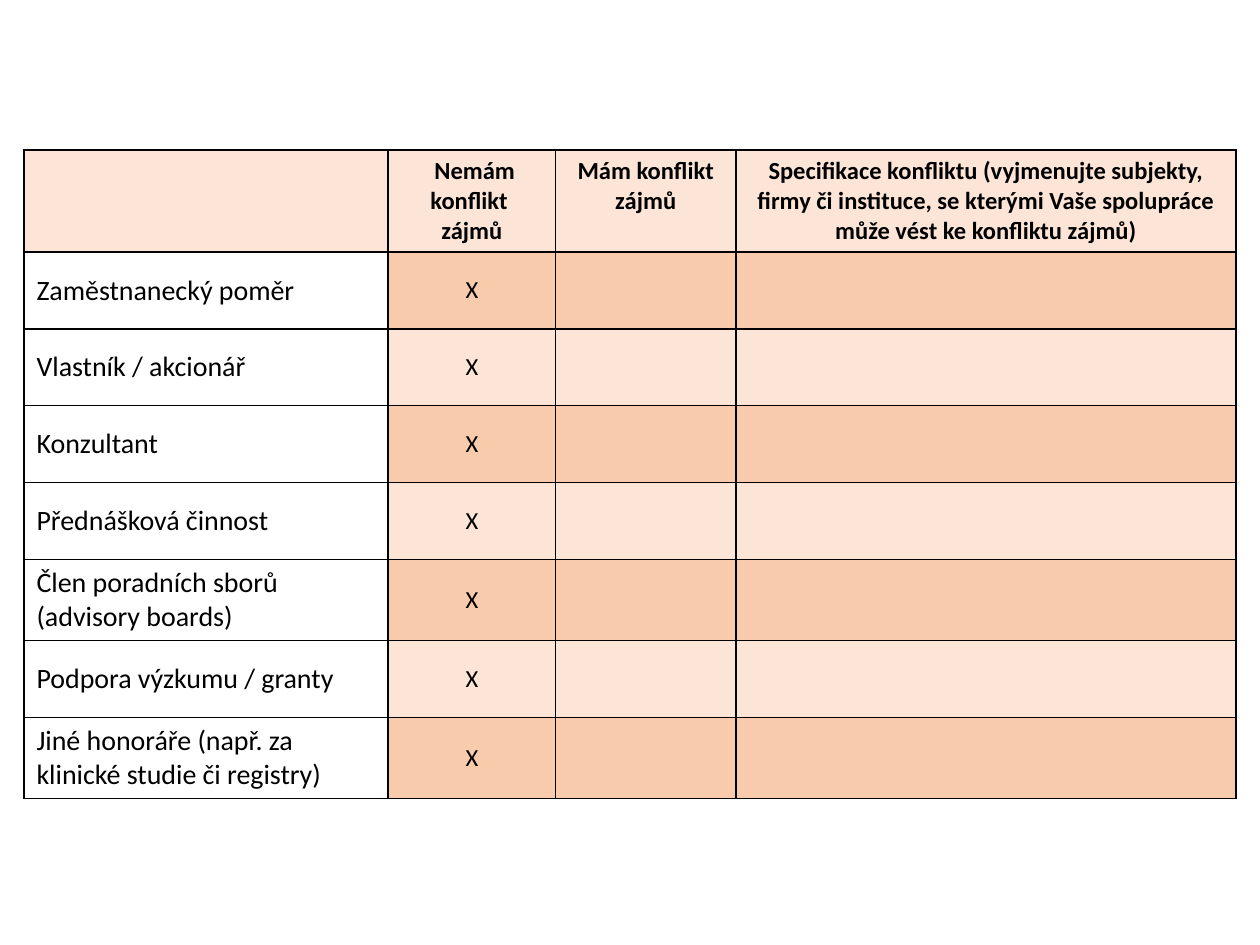
"""Build a slide with a conflict of interest declaration table."""
from dataclasses import dataclass

from lxml.etree import SubElement
from pptx import Presentation
from pptx.dml.color import RGBColor
from pptx.enum.text import MSO_ANCHOR as Anchor, PP_ALIGN as Align
from pptx.oxml.ns import qn
from pptx.table import _Cell as Cell
from pptx.util import Inches, Pt

BLACK, WHITE, LIGHT, DARK = "000000", "FFFFFF", "FCE4D6", "F8CBAD"
COLUMN_WIDTHS = (2.89, 1.33, 1.43, 3.97)
ROW_HEIGHT = 0.61
HEADERS = (
    "",
    " Nemám konflikt \nzájmů",
    "Mám konflikt zájmů",
    "Specifikace konfliktu (vyjmenujte subjekty, firmy či instituce, "
    "se kterými Vaše spolupráce může vést ke konfliktu zájmů)",
)
RELATIONS = (
    "Zaměstnanecký poměr",
    "Vlastník / akcionář",
    "Konzultant",
    "Přednášková činnost",
    "Člen poradních sborů (advisory boards)",
    "Podpora výzkumu / granty",
    "Jiné honoráře (např. za klinické studie či registry)",
)


@dataclass(frozen=True)
class CellStyle:
    fill: str
    size: int = 14
    bold: bool = False
    align: Align = Align.CENTER
    anchor: Anchor = Anchor.MIDDLE


HEADER = CellStyle(LIGHT, bold=True, anchor=Anchor.TOP)
LABEL = CellStyle(WHITE, size=16, align=Align.LEFT)
BANDS = (CellStyle(DARK), CellStyle(LIGHT))


def color(value: str) -> RGBColor:
    return RGBColor.from_string(value)


def add_borders(cell: Cell) -> None:
    properties = cell._tc.get_or_add_tcPr()
    for position, side in enumerate(("lnL", "lnR", "lnT", "lnB")):
        line = properties.makeelement(qn(f"a:{side}"), {"w": str(Pt(1))})
        fill = SubElement(line, qn("a:solidFill"))
        SubElement(fill, qn("a:srgbClr"), val=BLACK)
        properties.insert(position, line)


def write_cell(cell: Cell, text: str, style: CellStyle) -> None:
    cell.fill.solid()
    cell.fill.fore_color.rgb = color(style.fill)
    add_borders(cell)
    cell.vertical_anchor = style.anchor
    cell.text_frame.text = text
    for paragraph in cell.text_frame.paragraphs:
        paragraph.alignment = style.align
        for span in paragraph.runs:
            span.font.name = "Calibri"
            span.font.size = Pt(style.size)
            span.font.bold = style.bold
            span.font.color.rgb = color(BLACK)


def main() -> None:
    deck = Presentation()
    deck.slide_width, deck.slide_height = Inches(10), Inches(7.5)
    page = deck.slides.add_slide(deck.slide_layouts[6])
    row_count = len(RELATIONS) + 1
    table = page.shapes.add_table(
        row_count, len(COLUMN_WIDTHS), Inches(0.19), Inches(1.19),
        Inches(sum(COLUMN_WIDTHS)), Inches(ROW_HEIGHT * row_count),
    ).table
    table.first_row = table.horz_banding = False
    for column, width in zip(table.columns, COLUMN_WIDTHS):
        column.width = Inches(width)

    for column, text in enumerate(HEADERS):
        write_cell(table.cell(0, column), text, HEADER)
    for row, relation in enumerate(RELATIONS, start=1):
        band = BANDS[(row - 1) % 2]
        write_cell(table.cell(row, 0), relation, LABEL)
        for column, text in enumerate(("X", "", ""), start=1):
            write_cell(table.cell(row, column), text, band)
    deck.save("out.pptx")


if __name__ == "__main__":
    main()
